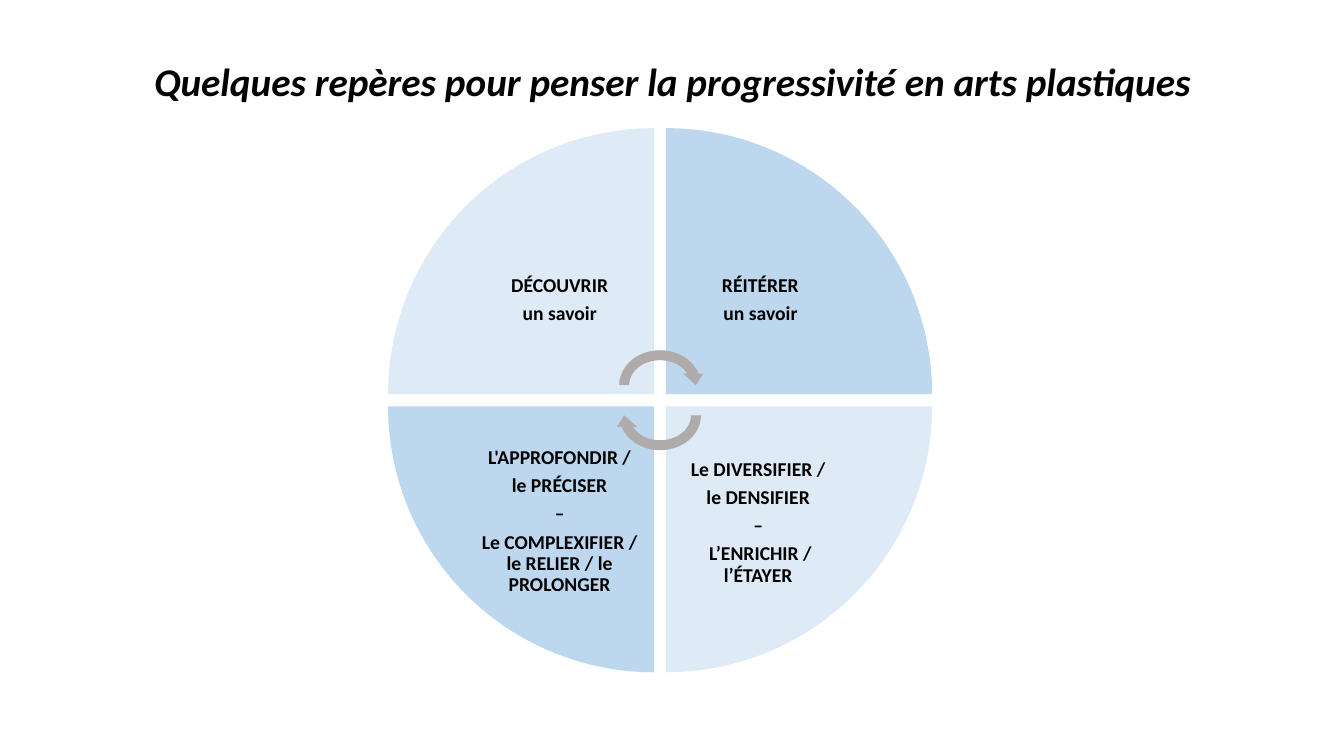
from pptx import Presentation
from pptx.dml.color import RGBColor
from pptx.enum.shapes import MSO_SHAPE
from pptx.enum.text import MSO_ANCHOR, PP_ALIGN
from pptx.util import Cm, Pt

COLORS = {"light": "DEEBF7", "mid": "BDD7EE", "arrow": "AFABAB", "text": "000000"}
WEDGE, GAP, LABEL = 6.7, 0.31, 4.75
ARROW_W, ARROW_H, ARROW_SHIFT = 2.31, 2.01, 0.38

# column, row, rotation, colour, label offset downwards, inset, lines
QUADRANTS = [
    (0, 0, 0, "light", 0, 0.28, ["DÉCOUVRIR", "un savoir"]),
    (1, 0, 90, "mid", 0, 0.28, ["RÉITÉRER", "un savoir"]),
    (1, 1, 180, "light", 0.56, 0.23,
     ["Le DIVERSIFIER / ", "le DENSIFIER ", "– ", "L’ENRICHIR / l’ÉTAYER "]),
    (0, 1, 270, "mid", 0.53, 0.2,
     ["L'APPROFONDIR /", "le PRÉCISER", "–",
      "Le COMPLEXIFIER / le RELIER / le PROLONGER"]),
]


def add_text(s, lines, left, top, width, height, size=14, italic=False,
             inset=0.25, after=0):
    tf = s.shapes.add_textbox(Cm(left), Cm(top), Cm(width), Cm(height)).text_frame
    tf.word_wrap = True
    tf.vertical_anchor = MSO_ANCHOR.MIDDLE
    tf.margin_left = tf.margin_right = tf.margin_top = tf.margin_bottom = Cm(inset)
    for i, line in enumerate(lines):
        p = tf.add_paragraph() if i else tf.paragraphs[0]
        p.alignment = PP_ALIGN.CENTER
        p.line_spacing = 0.9
        p.space_after = Pt(after)
        r = p.add_run()
        r.text = line
        r.font.name = "Calibri"
        r.font.size = Pt(size)
        r.font.bold = True
        r.font.italic = italic
        r.font.color.rgb = RGBColor.from_string(COLORS["text"])


def add_filled(s, kind, left, top, width, height, color, rotation):
    sp = s.shapes.add_shape(kind, Cm(left), Cm(top), Cm(width), Cm(height))
    sp.shadow.inherit = False
    sp.fill.solid()
    sp.fill.fore_color.rgb = RGBColor.from_string(COLORS[color])
    sp.line.fill.background()
    sp.rotation = rotation


def add_title(s, left, top, width, height):
    add_text(s, ["Quelques repères pour penser la progressivité en arts plastiques"],
             left, top, width, height, size=28, italic=True)


def add_cycle(s, left, top):
    # Quadrants, each with its label against the inner corner
    for col, row, rotation, color, offset, inset, lines in QUADRANTS:
        x, y = left + col * (WEDGE + GAP), top + row * (WEDGE + GAP)
        add_filled(s, MSO_SHAPE.PIE_WEDGE, x, y, WEDGE, WEDGE, color, rotation)
        add_text(s, lines, x + (1 - col) * (WEDGE - LABEL),
                 y + (1 - row) * (WEDGE - LABEL) + offset,
                 LABEL, LABEL, inset=inset, after=5)

    # Turning arrows around the centre
    centre = WEDGE + GAP / 2
    for shift, rotation in ((-ARROW_SHIFT, 0), (ARROW_SHIFT, 180)):
        add_filled(s, MSO_SHAPE.CIRCULAR_ARROW, left + centre - ARROW_W / 2,
                   top + centre + shift - ARROW_H / 2, ARROW_W, ARROW_H,
                   "arrow", rotation)


def main():
    prs = Presentation()
    prs.slide_width, prs.slide_height = Cm(33.87), Cm(19.05)
    s = prs.slides.add_slide(prs.slide_layouts[6])
    add_title(s, 2.34, 1.02, 29.21, 2.18)
    add_cycle(s, 9.78, 3.23)
    prs.save("out.pptx")


if __name__ == "__main__":
    main()
